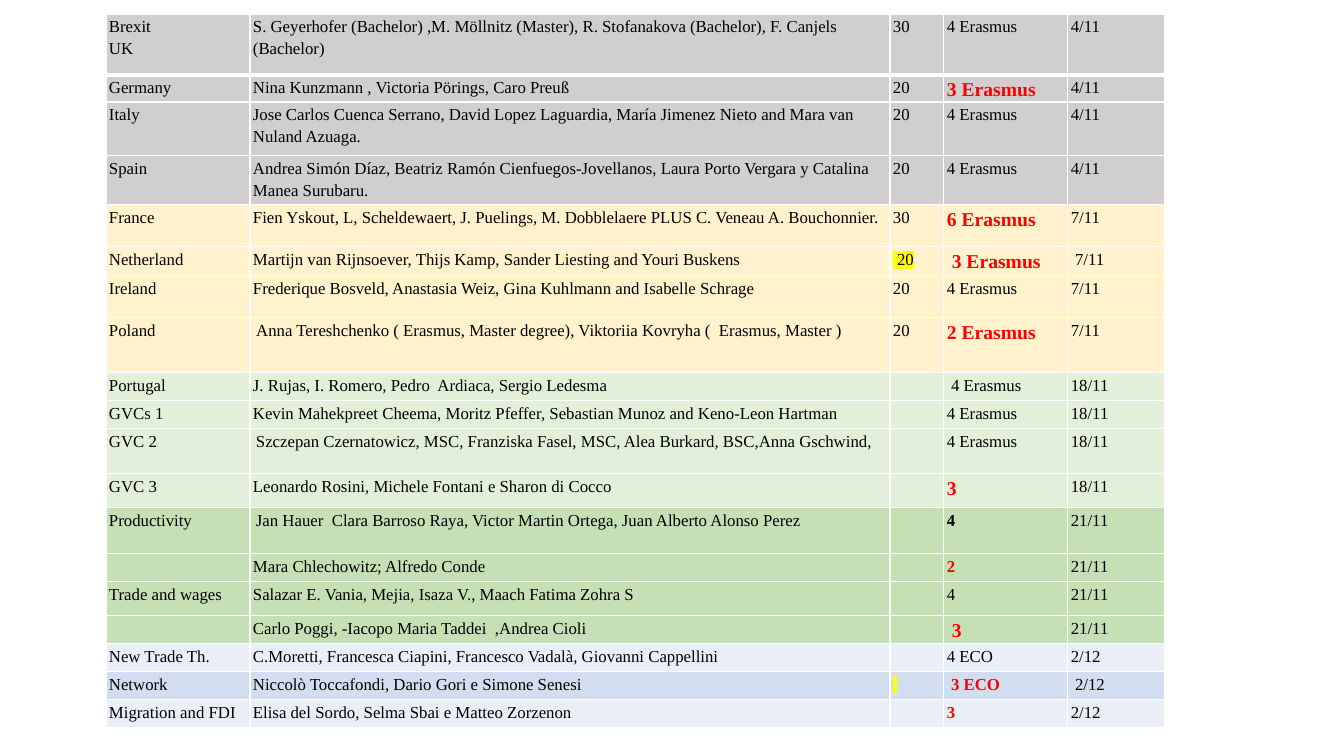
from dataclasses import dataclass

from lxml import etree
from pptx import Presentation
from pptx import util as u
from pptx.dml.color import RGBColor
from pptx.oxml.ns import qn

SCALE = 914400 / 100.8  # EMU in one px


def px(n: int) -> u.Emu:
    return u.Emu(round(n * SCALE))


@dataclass(frozen=True)
class Theme:
    face: str = "Times New Roman"
    size: int = 12
    large: int = 14
    ink: str = "000000"
    alert: str = "FF0000"
    mark: str = "FFFF00"
    rule: str = "FFFFFF"
    gray: str = "D0CECE"
    cream: str = "FFF2CC"
    mint: str = "E2F0D9"
    green: str = "C5E0B4"
    pale: str = "EAEFF7"
    blue: str = "D2DEEF"


T = Theme()


@dataclass(frozen=True)
class Style:
    size: int = T.size
    color: str = T.ink
    bold: bool = False


PLAIN = Style()
BOLD = Style(bold=True)
RED = Style(color=T.alert, bold=True)
LARGE = Style(T.large, T.alert, True)


@dataclass(frozen=True)
class Group:
    high: int
    fill: str
    topic: str
    people: str
    points: str
    seats: str
    date: str
    style: Style = PLAIN
    mark: bool = False  # highlight the points
    inset: int = 3  # side margin of the people cell


LEFT, TOP = 106, 14
COLS = [144, 640, 54, 124, 97]
GROUPS = [
    Group(61, T.gray, "Brexit\nUK",
          "S. Geyerhofer (Bachelor) ,M. Möllnitz (Master), R. Stofanakova (Bachelor), F. Canjels (Bachelor)",
          "30", "4 Erasmus", "4/11"),
    Group(26, T.gray, "Germany", "Nina Kunzmann , Victoria Pörings, Caro Preuß",
          "20", "3 Erasmus", "4/11", LARGE),
    Group(54, T.gray, "Italy",
          "Jose Carlos Cuenca Serrano, David Lopez Laguardia, María Jimenez Nieto and Mara van Nuland Azuaga.",
          "20", "4 Erasmus", "4/11"),
    Group(49, T.gray, "Spain",
          "Andrea Simón Díaz, Beatriz Ramón Cienfuegos-Jovellanos, Laura Porto Vergara y Catalina Manea Surubaru.",
          "20", "4 Erasmus", "4/11"),
    Group(42, T.cream, "France",
          "Fien Yskout, L, Scheldewaert, J. Puelings, M. Dobblelaere PLUS C. Veneau A. Bouchonnier.",
          "30", "6 Erasmus", "7/11", LARGE),
    Group(29, T.cream, "Netherland",
          "Martijn van Rijnsoever, Thijs Kamp, Sander Liesting and Youri Buskens",
          " 20", " 3 Erasmus", " 7/11", LARGE, mark=True),
    Group(42, T.cream, "Ireland",
          "Frederique Bosveld, Anastasia Weiz, Gina Kuhlmann and Isabelle Schrage",
          "20", "4 Erasmus", "7/11"),
    Group(55, T.cream, "Poland",
          " Anna Tereshchenko ( Erasmus, Master degree), Viktoriia Kovryha (  Erasmus, Master )",
          "20", "2 Erasmus", "7/11", LARGE),
    Group(28, T.mint, "Portugal", "J. Rujas, I. Romero, Pedro  Ardiaca, Sergio Ledesma",
          "", " 4 Erasmus", "18/11"),
    Group(28, T.mint, "GVCs 1",
          "Kevin Mahekpreet Cheema, Moritz Pfeffer, Sebastian Munoz and Keno-Leon Hartman",
          "", "4 Erasmus", "18/11"),
    Group(45, T.mint, "GVC 2",
          "Szczepan Czernatowicz, MSC, Franziska Fasel, MSC, Alea Burkard, BSC,Anna Gschwind,",
          "", "4 Erasmus", "18/11", inset=6),
    Group(34, T.mint, "GVC 3", "Leonardo Rosini, Michele Fontani e Sharon di Cocco",
          "", "3", "18/11", LARGE),
    Group(46, T.green, "Productivity",
          "Jan Hauer  Clara Barroso Raya, Victor Martin Ortega, Juan Alberto Alonso Perez",
          "", "4", "21/11", BOLD, inset=6),
    Group(28, T.green, "", "Mara Chlechowitz; Alfredo Conde", "", "2", "21/11", RED),
    Group(34, T.green, "Trade and wages",
          "Salazar E. Vania, Mejia, Isaza V., Maach Fatima Zohra S", "", "4", "21/11"),
    Group(28, T.green, "", "Carlo Poggi, -Iacopo Maria Taddei  ,Andrea Cioli",
          "", " 3", "21/11", LARGE),
    Group(28, T.pale, "New Trade Th.",
          "C.Moretti, Francesca Ciapini, Francesco Vadalà, Giovanni Cappellini",
          "", "4 ECO", "2/12"),
    Group(28, T.blue, "Network", "Niccolò Toccafondi, Dario Gori e Simone Senesi",
          " ", " 3 ECO", " 2/12", RED, mark=True),
    Group(28, T.pale, "Migration and FDI", "Elisa del Sordo, Selma Sbai e Matteo Zorzenon",
          "", "3", "2/12", RED),
]


def tint(node, color: str) -> None:
    etree.SubElement(node, qn("a:srgbClr"), val=color)


def edge(cell, side: str, width: int) -> None:
    line = etree.SubElement(cell._tc.get_or_add_tcPr(), qn(f"a:ln{side}"), w=str(u.Pt(width)))
    tint(etree.SubElement(line, qn("a:solidFill")), T.rule)


def write(cell, words: str, style: Style, mark: bool) -> None:
    cell.text = words
    for para in cell.text_frame.paragraphs:
        para.line_spacing = 1.15
        font = para.font
        font.name, font.size, font.bold = T.face, u.Pt(style.size), style.bold
        font.color.rgb = RGBColor.from_string(style.color)
        if not para.runs:  # an empty cell keeps the small line height
            etree.SubElement(para._p, qn("a:endParaRPr"), sz=str(style.size * 100))
        for run in para.runs if mark else ():
            tint(etree.SubElement(run._r.get_or_add_rPr(), qn("a:highlight")), T.mark)


def shape(cell, fill: str, inset: int, top: int, base: int) -> None:
    cell.margin_left = cell.margin_right = px(inset)
    cell.margin_top = cell.margin_bottom = px(1)
    for side, width in (("L", 1), ("R", 1), ("T", top), ("B", base)):
        edge(cell, side, width)
    cell.fill.solid()
    cell.fill.fore_color.rgb = RGBColor.from_string(fill)


def main() -> None:
    deck = Presentation()
    deck.slide_width, deck.slide_height = px(1344), px(756)
    slide = deck.slides.add_slide(deck.slide_layouts[6])

    # Table frame
    high = sum(g.high for g in GROUPS)
    table = slide.shapes.add_table(len(GROUPS), len(COLS), px(LEFT), px(TOP),
                                   px(sum(COLS)), px(high)).table
    table.first_row = table.horz_banding = False
    for col, wide in zip(table.columns, COLS):
        col.width = px(wide)

    # One row for each group of students
    for r, group in enumerate(GROUPS):
        table.rows[r].height = px(group.high)
        words = (group.topic, group.people, group.points, group.seats, group.date)
        for c, text in enumerate(words):
            cell = table.cell(r, c)
            shape(cell, group.fill, group.inset if c == 1 else 3,
                  3 if r == 1 else 1, 3 if r == 0 else 1)
            write(cell, text, group.style if c == 3 else PLAIN, group.mark and c == 2)

    deck.save("out.pptx")


if __name__ == "__main__":
    main()
